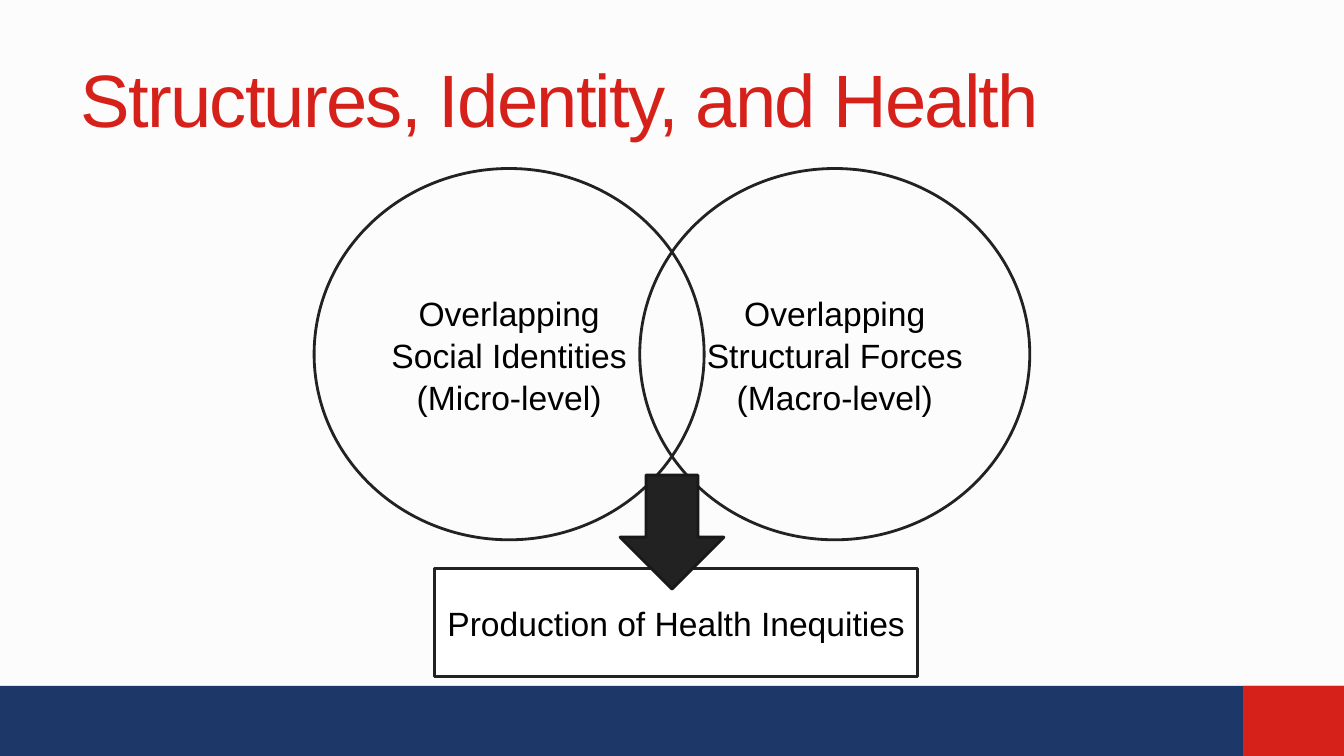
from lxml import etree
from pptx import Presentation
from pptx.dml.color import RGBColor
from pptx.enum import shapes, text
from pptx.util import Pt

NAVY, RED, INK, BLACK, WHITE = "1C3768", "D6201A", "222222", "000000", "FFFFFF"
SLIDE_WIDTH, SLIDE_HEIGHT = 960, 540


def color(code):
    """Turn a hex string into a colour."""
    return RGBColor.from_string(code)


def add_part(slide, kind, box, fill=None, line=None):
    """Add a preset shape in a box of left, top, width and height."""
    part = slide.shapes.add_shape(kind, *map(Pt, box))
    part.shadow.inherit = False
    if fill:
        part.fill.solid()
        part.fill.fore_color.rgb = color(fill)
    else:
        part.fill.background()
    if line:
        part.line.color.rgb = color(line)
        part.line.width = Pt(2)
    else:
        part.line.fill.background()
    return part


def write_label(part, lines, margin=7.2):
    """Write centred paragraphs inside a shape."""
    frame = part.text_frame
    frame.word_wrap = True
    frame.vertical_anchor = text.MSO_ANCHOR.MIDDLE
    frame.margin_left = frame.margin_right = Pt(margin)
    frame.text = "\n".join(lines)
    for paragraph in frame.paragraphs:
        paragraph.alignment = text.PP_ALIGN.CENTER
        paragraph.line_spacing = 1.05
        paragraph.font.size = Pt(24)
        paragraph.font.name = "Arial"
        paragraph.font.color.rgb = color(BLACK)


def add_footer(slide, box):
    """Draw the navy band with its red right end."""
    left, top, width, height = box
    red_width = 72
    add_part(slide, shapes.MSO_SHAPE.RECTANGLE, box, NAVY)
    add_part(slide, shapes.MSO_SHAPE.RECTANGLE,
             (left + width - red_width, top, red_width, height), RED)


def add_title(slide, box, wording):
    """Write the slide title with tightened letters."""
    title = slide.shapes.add_textbox(*map(Pt, box))
    frame = title.text_frame
    frame.word_wrap = True
    frame.vertical_anchor = text.MSO_ANCHOR.MIDDLE
    frame.margin_left = frame.margin_right = Pt(9.4)
    frame.margin_top, frame.margin_bottom = Pt(12), Pt(5)
    paragraph = frame.paragraphs[0]
    run = paragraph.add_run()
    run.text = wording
    run.font.size = Pt(53)
    run.font.name = "Arial"
    run.font.color.rgb = color(RED)
    run.font._element.set("spc", "-130")


def add_venn(slide, box, labels):
    """Draw two overlapping circles that span the box."""
    left, top, width, height = box
    circle_width = 278.6
    step = width - circle_width
    for index, lines in enumerate(labels):
        circle = add_part(slide, shapes.MSO_SHAPE.OVAL,
                          (left + index * step, top, circle_width, height), line=INK)
        write_label(circle, lines, margin=4)


def add_outcome(slide, box, wording):
    """Draw the outcome box and the arrow that points into it."""
    left, top, width, height = box
    outcome = add_part(slide, shapes.MSO_SHAPE.RECTANGLE, box, WHITE, INK)
    write_label(outcome, [wording])
    arrow_width, arrow_height, overlap = 74.2, 81.4, 14.6
    add_part(slide, shapes.MSO_SHAPE.DOWN_ARROW,
             ((SLIDE_WIDTH - arrow_width) / 2, top + overlap - arrow_height,
              arrow_width, arrow_height), INK, "191919")


def main():
    """Build and save the slide."""
    deck = Presentation()
    deck.slide_width, deck.slide_height = Pt(SLIDE_WIDTH), Pt(SLIDE_HEIGHT)
    slide = deck.slides.add_slide(deck.slide_layouts[6])
    slide.background.fill.solid()
    slide.background.fill.fore_color.rgb = color("FCFCFC")
    add_footer(slide, (0, 490, SLIDE_WIDTH, 50))
    add_title(slide, (48.4, 21.6, 872.6, 90), "Structures, Identity, and Health")
    add_venn(slide, (224.4, 120.4, 511.2, 265.2), [
        ["Overlapping Social Identities (Micro-level)"],
        ["Overlapping Structural Forces", "(Macro-level)"],
    ])
    add_outcome(slide, (310.6, 406.2, 344.8, 77), "Production of Health Inequities")
    deck.save("out.pptx")


if __name__ == "__main__":
    main()
